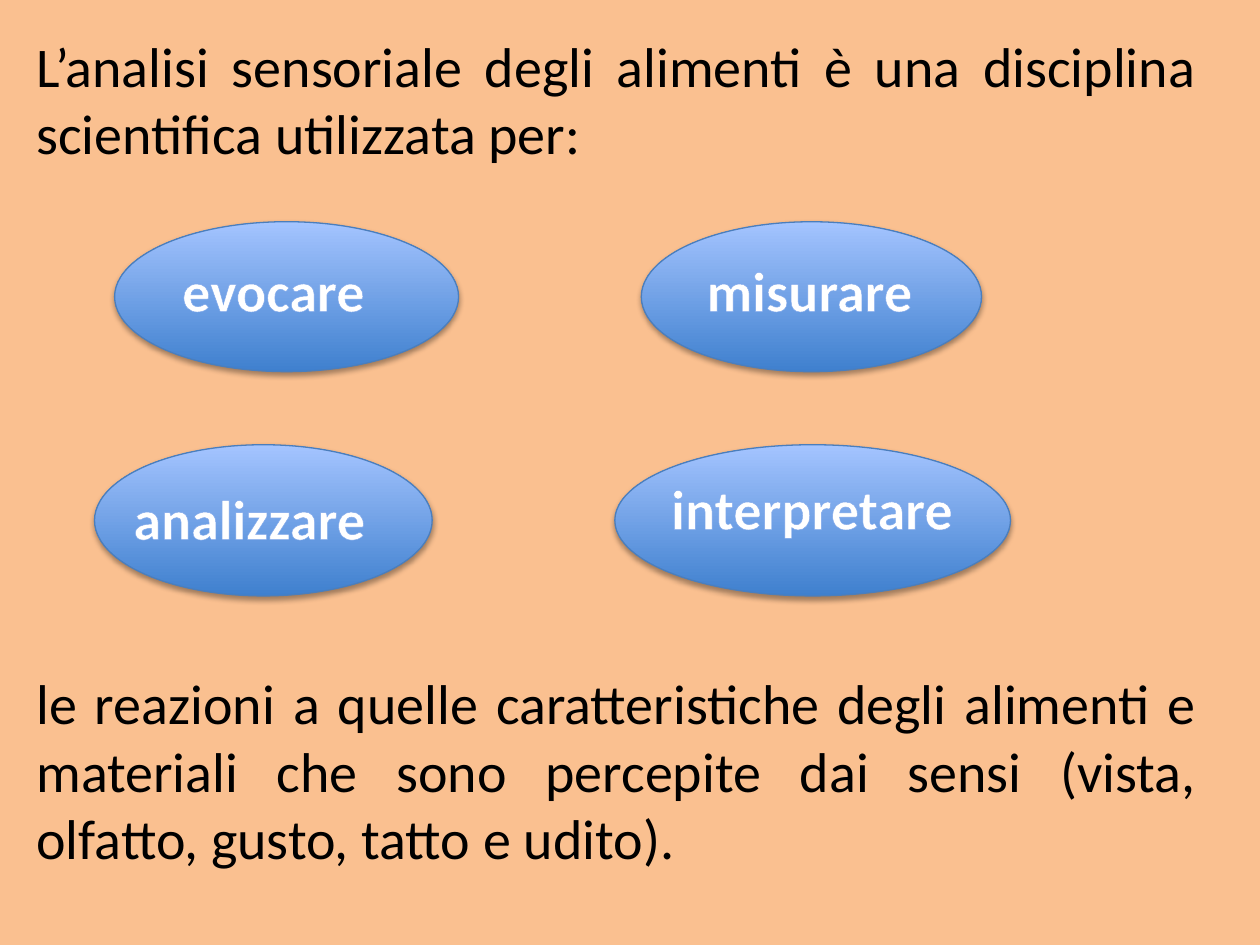
from dataclasses import dataclass

from lxml.etree import SubElement
from pptx import Presentation
from pptx.dml.color import RGBColor
from pptx.enum.shapes import MSO_SHAPE as Shape
from pptx.enum.text import MSO_AUTO_SIZE as AutoSize, PP_ALIGN as Align
from pptx.oxml.ns import qn
from pptx.util import Inches, Pt


@dataclass(frozen=True)
class Theme:
    font: str = "Calibri"
    size: int = 32
    background: str = "FAC090"
    ink: str = "000000"
    label: str = "FFFFFF"
    label_edge: str = "7EA6EA"
    label_edge_width: float = 2.48
    oval_bottom: str = "3F80CE"
    oval_top: str = "A4C4FF"
    oval_line: str = "4B7EBC"


THEME = Theme()
WIDTH, HEIGHT = 10, 7.5
MARGIN, TEXT_WIDTH = 0.19, 9.41
LABEL_HEIGHT = 0.64

INTRO = "L’analisi sensoriale degli alimenti è una disciplina scientifica utilizzata per:"
CLOSING = ("le reazioni a quelle caratteristiche degli alimenti e materiali che sono "
           "percepite dai sensi (vista, olfatto, gusto, tatto e udito).")

# Each row: top, oval height, then (word, oval left, oval width,
# label left, label width, label drop below the row's top, alignment).
ACTION_ROWS = [
    (1.76, 1.19, [("evocare ", 0.91, 2.73, 1.26, 1.92, 0.22, Align.CENTER),
                  ("misurare ", 5.09, 2.7, 5.48, 1.89, 0.22, Align.CENTER)]),
    (3.53, 1.2, [("analizzare ", 0.75, 2.68, 0.75, 2.56, 0.26, Align.CENTER),
                 ("interpretare", 4.88, 3.14, 5.23, 2.56, 0.18, Align.JUSTIFY)]),
]


def color(value):
    return RGBColor.from_string(value)


def add_text(page, box, text, align, ink, bold=False):
    frame = page.shapes.add_textbox(*map(Inches, box)).text_frame
    frame.word_wrap = True
    frame.auto_size = AutoSize.SHAPE_TO_FIT_TEXT
    frame.text = text
    para = frame.paragraphs[0]
    para.alignment = align
    span = para.runs[0]
    span.font.name = THEME.font
    span.font.size = Pt(THEME.size)
    span.font.bold = bold
    span.font.color.rgb = color(ink)
    return span


def outline_text(span):
    properties = span.font._element
    edge = properties.makeelement(qn("a:ln"), {"w": str(Pt(THEME.label_edge_width))})
    fill = SubElement(edge, qn("a:solidFill"))
    SubElement(fill, qn("a:srgbClr"), val=THEME.label_edge)
    properties.insert(0, edge)


def add_soft_shadow(shape):
    shape.shadow.inherit = False
    effects = shape._element.spPr.find(qn("a:effectLst"))
    shadow = SubElement(effects, qn("a:outerShdw"), blurRad=str(Pt(3.1)),
                        dist=str(Pt(1.8)), dir="5400000", rotWithShape="0")
    tint = SubElement(shadow, qn("a:srgbClr"), val="000000")
    SubElement(tint, qn("a:alpha"), val="35000")


def add_oval(page, box):
    oval = page.shapes.add_shape(Shape.OVAL, *map(Inches, box))
    oval.fill.gradient()
    oval.fill.gradient_angle = 90
    shades = (THEME.oval_bottom, THEME.oval_top)
    for position, (stop, shade) in enumerate(zip(oval.fill.gradient_stops, shades)):
        stop.position = position
        stop.color.rgb = color(shade)
    oval.line.color.rgb = color(THEME.oval_line)
    oval.line.width = Pt(0.75)
    add_soft_shadow(oval)


def add_action_row(page, top, height, actions):
    for word, left, width, label_left, label_width, drop, align in actions:
        add_oval(page, (left, top, width, height))
        label_box = (label_left, top + drop, label_width, LABEL_HEIGHT)
        outline_text(add_text(page, label_box, word, align, THEME.label, bold=True))


def main():
    deck = Presentation()
    deck.slide_width, deck.slide_height = Inches(WIDTH), Inches(HEIGHT)
    page = deck.slides.add_slide(deck.slide_layouts.get_by_name("Blank"))
    page.background.fill.solid()
    page.background.fill.fore_color.rgb = color(THEME.background)

    add_text(page, (MARGIN, 0.2, TEXT_WIDTH, 1.18), INTRO, Align.JUSTIFY, THEME.ink)
    for top, height, actions in ACTION_ROWS:
        add_action_row(page, top, height, actions)
    add_text(page, (MARGIN, 5.26, TEXT_WIDTH, 1.72), CLOSING, Align.JUSTIFY, THEME.ink)
    deck.save("out.pptx")


if __name__ == "__main__":
    main()
